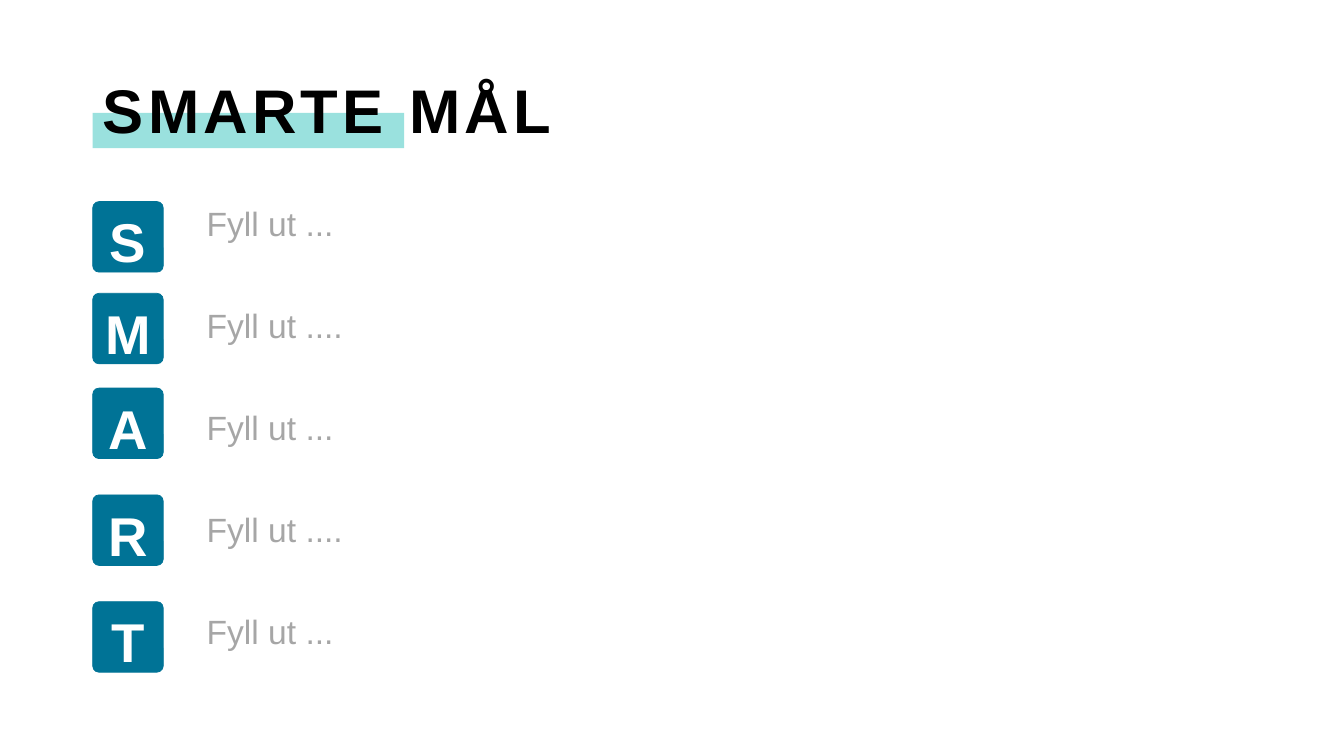
from lxml import etree
from pptx import Presentation
from pptx.dml.color import RGBColor
from pptx.enum.shapes import MSO_SHAPE
from pptx.enum.text import MSO_ANCHOR, MSO_AUTO_SIZE, PP_ALIGN
from pptx.oxml.ns import qn
from pptx.util import Pt

RECTANGLE, ROUNDED = MSO_SHAPE.RECTANGLE, MSO_SHAPE.ROUNDED_RECTANGLE
TOP, MIDDLE = MSO_ANCHOR.TOP, MSO_ANCHOR.MIDDLE
LEFT, CENTER = PP_ALIGN.LEFT, PP_ALIGN.CENTER
NO_FIT = MSO_AUTO_SIZE.NONE

FONT = "Arial"
COLORS = {
    "black": "000000",
    "white": "FFFFFF",
    "mint": "9AE1DE",
    "blue": "007396",
    "grey": "A6A6A6",
}
MARGIN = 66.24
TILE_SIZE = 50.4
TILES = [("S", 144), ("M", 209.5), ("A", 277.2), ("R", 353.5), ("T", 429.8)]
PROMPTS = ["Fyll ut ...", "Fyll ut ....", "Fyll ut ...", "Fyll ut ....", "Fyll ut ..."]


def color(name):
    return RGBColor.from_string(COLORS[name])


def write(para, text, size, ink, bold=False, align=LEFT, line=1.0, before=0, tracking=0):
    """Fill one paragraph with text in the given format."""
    para.alignment = align
    para.line_spacing = line
    para.space_before = Pt(before)
    span = para.add_run()
    span.text = text
    span.font.name = FONT
    span.font.size = Pt(size)
    span.font.bold = bold
    span.font.color.rgb = color(ink)
    if tracking:
        span._r.get_or_add_rPr().set("spc", str(tracking * 100))


class SmartSlide:
    def __init__(self, deck):
        self.page = deck.slides.add_slide(deck.slide_layouts[1])

    def place(self, box, left, top, width, height, anchor):
        box.left, box.top, box.width, box.height = map(Pt, (left, top, width, height))
        frame = box.text_frame
        frame.word_wrap = True
        frame.auto_size = NO_FIT
        frame.vertical_anchor = anchor
        return frame

    def title(self, text):
        frame = self.place(self.page.shapes.title, MARGIN, 28.8, 852.5, 104.4, MIDDLE)
        write(frame.paragraphs[0], text, 44, "black", bold=True, line=0.9, tracking=3)

    def shape(self, kind, left, top, width, height, fill):
        shape = self.page.shapes.add_shape(kind, Pt(left), Pt(top), Pt(width), Pt(height))
        shape.shadow.inherit = False
        shape.fill.solid()
        shape.fill.fore_color.rgb = color(fill)
        return shape

    def highlight(self):
        bar = self.shape(RECTANGLE, MARGIN, 80.64, 222.5, 25.2, "mint")
        bar.line.fill.background()
        # Behind the title
        self.page.shapes.title.element.addprevious(bar.element)

    def prompts(self, texts):
        frame = self.place(self.page.placeholders[1], 140.4, 144.72, 828, 342.7, TOP)
        for index, text in enumerate(texts):
            para = frame.add_paragraph() if index else frame.paragraphs[0]
            properties = para._p.get_or_add_pPr()
            properties.set("marL", "0")
            properties.set("indent", "0")
            etree.SubElement(properties, qn("a:buNone"))
            write(para, text, 24, "grey", line=0.9, before=47 if index else 0)

    def tile(self, letter, top):
        tile = self.shape(ROUNDED, MARGIN, top, TILE_SIZE, TILE_SIZE, "blue")
        tile.adjustments[0] = 0.09
        tile.line.color.rgb = color("blue")
        tile.line.width = Pt(0.5)
        frame = tile.text_frame
        frame.vertical_anchor = MIDDLE
        frame.margin_left = frame.margin_right = frame.margin_bottom = 0
        frame.margin_top = Pt(6)
        write(frame.paragraphs[0], letter, 39, "white", bold=True, align=CENTER)


def main():
    deck = Presentation()
    deck.slide_width, deck.slide_height = Pt(960), Pt(540)
    slide = SmartSlide(deck)

    # Heading
    slide.title("SMARTE MÅL")
    slide.highlight()

    # Goals to fill in, with their letters
    slide.prompts(PROMPTS)
    for letter, top in TILES:
        slide.tile(letter, top)

    deck.save("out.pptx")


if __name__ == "__main__":
    main()
